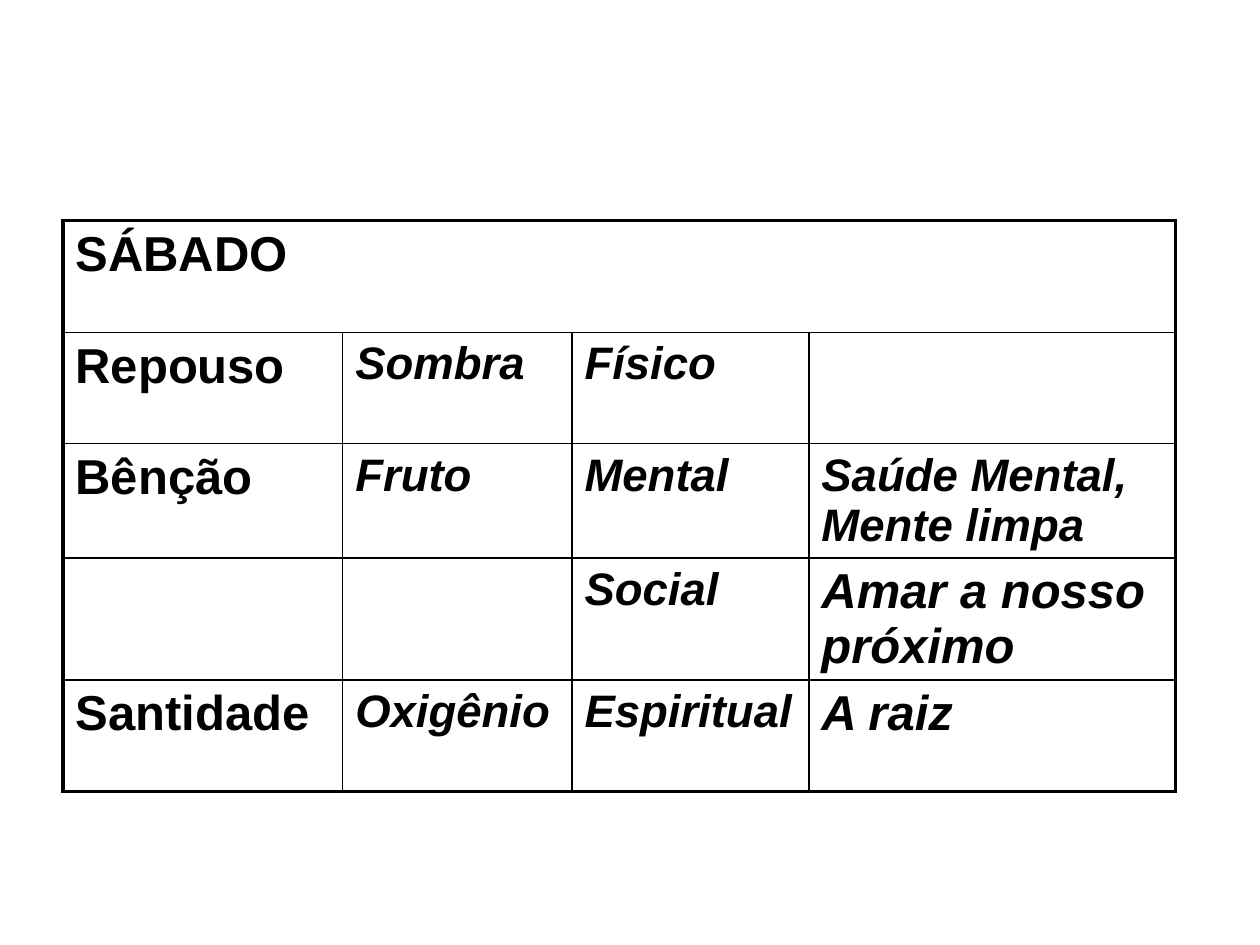
import pptx
import pptx.util
import pptx.dml.color
import pptx.enum.text
from lxml import etree
from pptx.oxml.ns import qn

Pt = pptx.util.Pt
COLORS = {"ink": "000000"}
THICK, THIN, NONE = 2.25, 1, 0


def write(cell, text, size=26, bold=True, italic=True, font="Arial"):
    paragraph = cell.text_frame.paragraphs[0]
    span = paragraph.add_run()
    span.text = text
    span.font.name = font
    span.font.size = Pt(size)
    span.font.bold = bold
    span.font.italic = italic
    span.font.color.rgb = pptx.dml.color.RGBColor.from_string(COLORS["ink"])


def set_borders(cell, **widths):
    """Draw cell edges L, R, T, B with widths in points; 0 hides an edge."""
    properties = cell._tc.get_or_add_tcPr()
    for position, (edge, width) in enumerate(widths.items()):
        line = etree.Element(qn("a:ln" + edge), w=str(int(Pt(width))))
        if width:
            fill = etree.SubElement(line, qn("a:solidFill"))
            etree.SubElement(fill, qn("a:srgbClr"), val=COLORS["ink"])
        else:
            etree.SubElement(line, qn("a:noFill"))
        properties.insert(position, line)


deck = pptx.Presentation()
deck.slide_width, deck.slide_height = Pt(720), Pt(540)
page = deck.slides.add_slide(deck.slide_layouts[6])

column_widths = [159.84, 116.64, 14.4, 135.36, 209.52]
row_heights = [64, 63.5, 64, 64, 64]
# Text and size by column; the third column only widens its neighbours.
rows = [
    {0: ("SÁBADO", 28)},
    {0: ("Repouso", 28), 1: ("Sombra", 26), 3: ("Físico", 26)},
    {0: ("Bênção", 28), 1: ("Fruto", 26), 3: ("Mental", 26),
     4: ("Saúde Mental, Mente limpa", 26)},
    {3: ("Social", 26), 4: ("Amar a nosso próximo", 28)},
    {0: ("Santidade", 28), 1: ("Oxigênio", 26), 3: ("Espiritual", 26),
     4: ("A raiz", 28)},
]
last_row, last_column = len(rows) - 1, len(column_widths) - 1

frame = page.shapes.add_table(
    len(rows), len(column_widths), Pt(36), Pt(126),
    Pt(sum(column_widths)), Pt(sum(row_heights)))
table = frame.table
table.first_row = False
table.horz_banding = False
for column, width in zip(table.columns, column_widths):
    column.width = Pt(width)
for row, height in zip(table.rows, row_heights):
    row.height = Pt(height)

for r, texts in enumerate(rows):
    inner = NONE if r == 0 else THIN
    for c in range(len(column_widths)):
        cell = table.cell(r, c)
        cell.fill.background()
        set_borders(
            cell,
            L=THICK if c == 0 else inner,
            R=THICK if c == last_column else inner,
            T=THICK if r == 0 else THIN,
            B=THICK if r == last_row else THIN)
        if c in texts:
            text, size = texts[c]
            write(cell, text, size=size, italic=c > 0)
    first = 2 if r == 0 else 1
    table.cell(r, first).merge(table.cell(r, first + 1))

deck.save("out.pptx")
